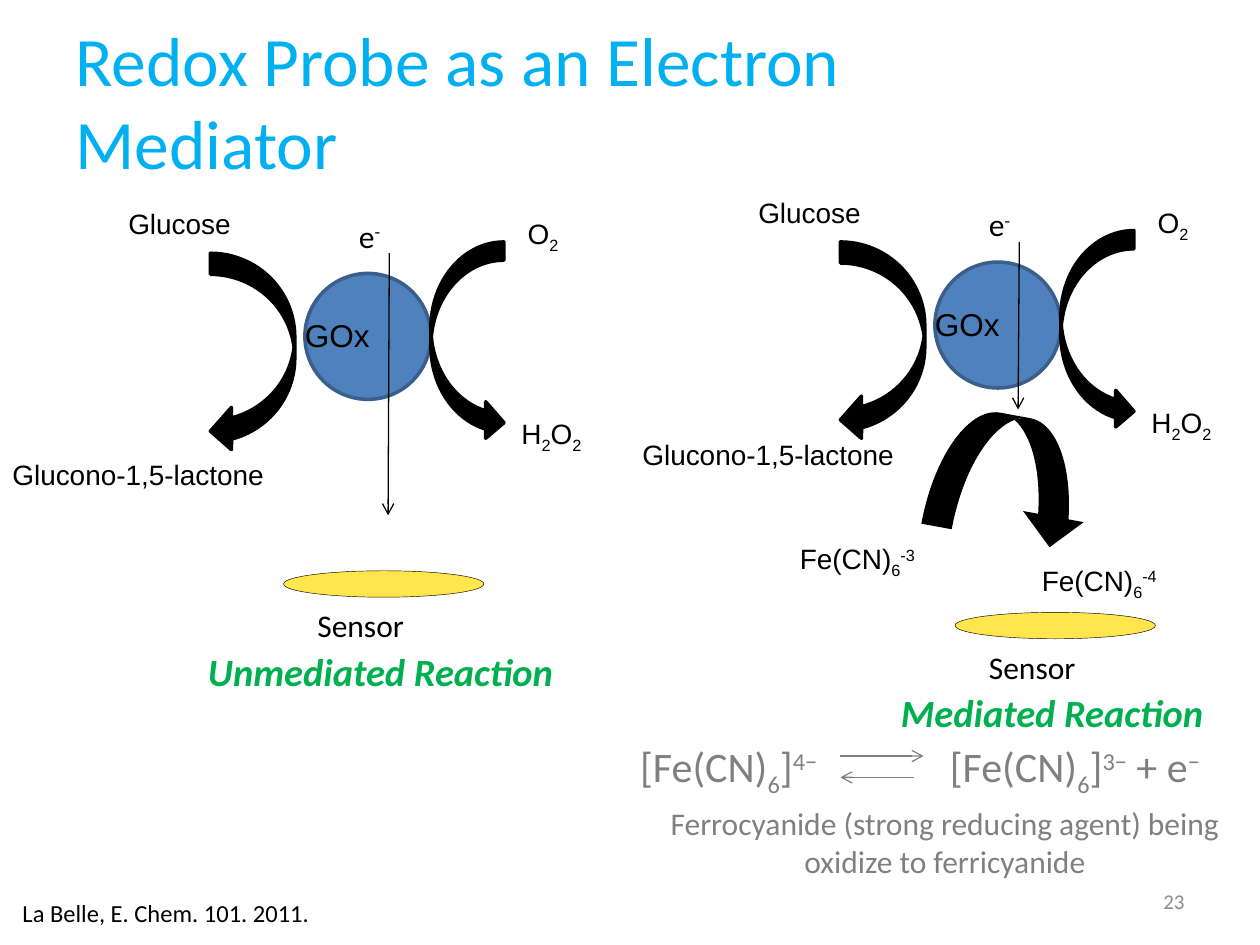
from lxml import etree
from pptx import Presentation
from pptx import util as u
from pptx.dml import color
from pptx.enum import shapes, text
from pptx.oxml import ns

Inches = u.Inches
COLORS = {
    "title": "00B0F0", "ink": "000000", "enzyme": "4F81BD", "enzyme_edge": "3A5F8C",
    "sensor": "FFE64D", "caption": "00B050", "gray": "808080", "number": "8C8C8C",
}
SUB, SUPER = -25000, 30000


def rgb(name):
    """Return the named colour."""
    return color.RGBColor.from_string(COLORS[name])


def add_runs(paragraph, parts, size, name="ink", font="Calibri", bold=None):
    """Add (text, baseline) runs in one style; bold runs are italic too."""
    for content, baseline in parts:
        run = paragraph.add_run()
        run.text = content
        run.font.size = u.Pt(size)
        run.font.name = font
        run.font.bold = run.font.italic = bold
        run.font.color.rgb = rgb(name)
        if baseline:
            run._r.get_or_add_rPr().set("baseline", str(baseline))


def add_label(slide, box, parts, size, align="LEFT", wrap=False, inset=True, **style):
    """Add a text box with one paragraph of runs."""
    shape = slide.shapes.add_textbox(*map(Inches, box))
    frame = shape.text_frame
    frame.word_wrap = wrap
    if not inset:
        frame.margin_left = frame.margin_right = frame.margin_top = frame.margin_bottom = 0
    paragraph = frame.paragraphs[0]
    paragraph.alignment = text.PP_ALIGN[align]
    add_runs(paragraph, parts, size, **style)
    return shape


def add_solid(slide, kind, box, fill, edge=None, width=2):
    """Add a filled preset shape, outlined when an edge colour is named."""
    shape = slide.shapes.add_shape(shapes.MSO_SHAPE[kind], *map(Inches, box))
    shape.shadow.inherit = False
    shape.fill.solid()
    shape.fill.fore_color.rgb = rgb(fill)
    if edge:
        shape.line.color.rgb = rgb(edge)
        shape.line.width = u.Pt(width)
    else:
        shape.line.fill.background()
    return shape


def add_arrow(slide, start, end, name="ink"):
    """Add a thin line with an open arrowhead at its end."""
    connector = slide.shapes.add_connector(
        shapes.MSO_CONNECTOR.STRAIGHT, *map(Inches, start + end))
    connector.line.color.rgb = rgb(name)
    connector.line.width = u.Pt(0.75)
    etree.SubElement(connector.line._get_or_add_ln(), ns.qn("a:tailEnd"), type="arrow")
    etree.SubElement(connector._element.spPr, ns.qn("a:effectLst"))


def draw_enzyme(slide, left, top, electron_length, lactone_drop):
    """Draw the glucose oxidase cycle with its reactants and products."""
    add_label(slide, (left + 2.75, top + 0.08, 0.58, 0.51),
              [("e", 0), ("-", SUPER)], 18, wrap=True)
    add_solid(slide, "OVAL", (left + 2.42, top + 0.58, 1, 1), "enzyme", "enzyme_edge")
    add_label(slide, (left + 2.42, top + 0.92, 0.52, 0.3), [("GOx", 0)], 18,
              inset=False, font="Arial")
    add_arrow(slide, (left + 3.09, top + 0.42), (left + 3.08, top + 0.42 + electron_length))
    add_solid(slide, "CURVED_LEFT_ARROW", (left + 1.67, top + 0.42, 0.67, 1.58), "ink", "ink")
    oxygen_arrow = add_solid(
        slide, "CURVED_LEFT_ARROW", (left + 3.42, top + 0.33, 0.58, 1.58), "ink", "ink")
    oxygen_arrow._element.spPr.find(ns.qn("a:xfrm")).set("flipH", "1")
    labels = [
        (0.92, 0, 1.02, [("Glucose", 0)]),
        (0, lactone_drop, 2.22, [("Glucono-1,5-lactone", 0)]),
        (4.09, 0.08, 0.46, [("O", 0), ("2", SUB)]),
        (4.04, 1.67, 0.7, [("H", 0), ("2", SUB), ("O", 0), ("2", SUB)]),
    ]
    for x, y, width, parts in labels:
        add_label(slide, (left + x, top + y, width, 0.37), parts, 16, font="Arial")


def draw_sensor(slide, left, top, caption, caption_width):
    """Draw the sensor disc with its label and the reaction caption."""
    add_solid(slide, "OVAL", (left, top + 0.02, 1.59, 0.21), "sensor", "ink", 0.25)
    add_label(slide, (left + 0.17, top + 0.25, 0.89, 0.4), [("Sensor", 0)], 18)
    add_label(slide, (left + 0.77 - caption_width / 2, top + 0.58, caption_width, 0.47),
              [(caption, 0)], 22, align="CENTER", name="caption", bold=True)


def draw_mediator(slide, left, top):
    """Draw the iron complex passing the electron on."""
    arrow = add_solid(slide, "CURVED_LEFT_ARROW", (left + 1.29, top, 0.98, 1.28), "ink")
    arrow.rotation = 280.4
    for x, y, width, charge in [(0, 1.1, 1.19, "-3"), (1.92, 1.27, 1.15, "-4")]:
        add_label(slide, (left + x, top + y, width, 0.37),
                  [("Fe(CN)", 0), ("6", SUB), (charge, SUPER)], 16, font="Arial")


def place(placeholder, box):
    """Move a placeholder and return its text frame without autofit."""
    placeholder.left, placeholder.top, placeholder.width, placeholder.height = map(Inches, box)
    placeholder.text_frame.auto_size = text.MSO_AUTO_SIZE.NONE
    return placeholder.text_frame


def draw_title(slide, box):
    """Fill the title placeholder."""
    frame = place(slide.shapes.title, box)
    frame.vertical_anchor = text.MSO_ANCHOR.MIDDLE
    frame.paragraphs[0].alignment = text.PP_ALIGN.LEFT
    add_runs(frame.paragraphs[0], [("Redox Probe as an Electron Mediator", 0)], 39.6, "title")


def complex_ion(charge):
    """Return the runs of a cyanide complex with the given charge."""
    return [("[Fe(CN)", 0), ("6", SUB), ("]", 0), (charge, SUPER)]


def draw_equation(slide, left, top):
    """Write the two sides of the redox equation, its arrows and the note below."""
    frame = place(slide.placeholders[1], (left, top, 2.25, 0.58))
    paragraph = frame.paragraphs[0]
    properties = paragraph._p.get_or_add_pPr()
    properties.set("marL", str(Inches(0.56)))
    properties.set("indent", "0")
    etree.SubElement(properties, ns.qn("a:buNone"))
    paragraph.space_before = u.Pt(0)
    add_runs(paragraph, complex_ion("4−"), 24, "gray")
    add_label(slide, (left + 3.02, top, 2.3, 0.58),
              complex_ion("3−") + [(" + e", 0), ("−", SUPER)], 24, wrap=True, name="gray")
    add_arrow(slide, (left + 2.25, top + 0.17), (left + 2.91, top + 0.17), "gray")
    add_arrow(slide, (left + 2.83, top + 0.34), (left + 2.25, top + 0.34), "gray")
    add_label(slide, (left + 0.58, top + 0.5, 5, 0.71),
              [("Ferrocyanide (strong reducing agent) being oxidize to ferricyanide", 0)],
              18, align="CENTER", wrap=True, name="gray")


def draw_footer(slide, left, top):
    """Write the citation and the slide number."""
    add_label(slide, (left, top, 5.75, 0.33), [("La Belle, E. Chem. 101. 2011.", 0)],
              14, wrap=True)
    number = add_label(slide, (left + 7.09, top - 0.13, 2.33, 0.4), [("23", 0)], 12,
                       align="RIGHT", wrap=True, name="number")
    number.text_frame.vertical_anchor = text.MSO_ANCHOR.MIDDLE


def main():
    """Build the slide and save it."""
    presentation = Presentation()
    presentation.slide_width, presentation.slide_height = Inches(10), Inches(7.5)
    slide = presentation.slides.add_slide(presentation.slide_layouts[1])
    draw_title(slide, (0.5, 0.17, 8.25, 1.25))
    draw_enzyme(slide, 0, 1.59, electron_length=2.08, lactone_drop=1.99)
    draw_enzyme(slide, 5, 1.5, electron_length=1.33, lactone_drop=1.92)
    draw_mediator(slide, 6.25, 3.15)
    draw_sensor(slide, 2.25, 4.51, "Unmediated Reaction", 2.97)
    draw_sensor(slide, 7.58, 4.84, "Mediated Reaction", 2.63)
    draw_equation(slide, 4.42, 5.83)
    draw_footer(slide, 0.08, 7.08)
    presentation.save("out.pptx")


if __name__ == "__main__":
    main()
